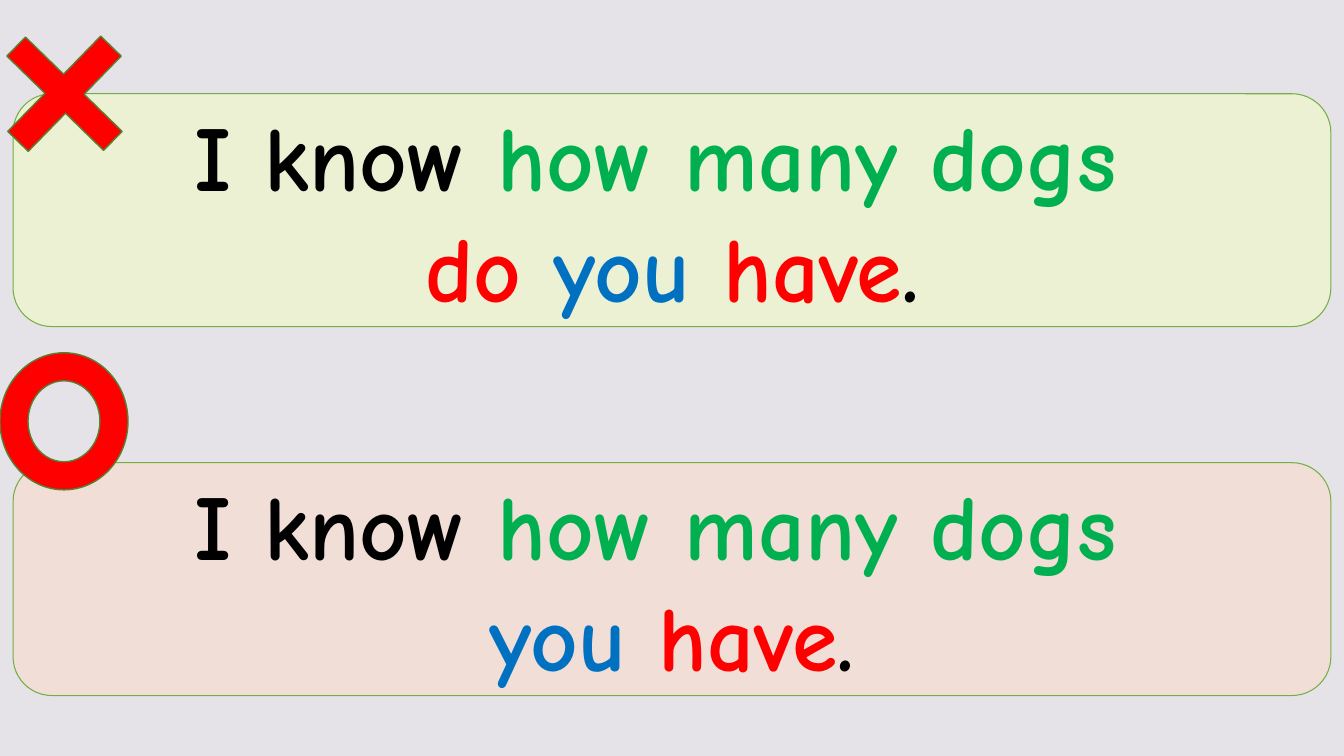
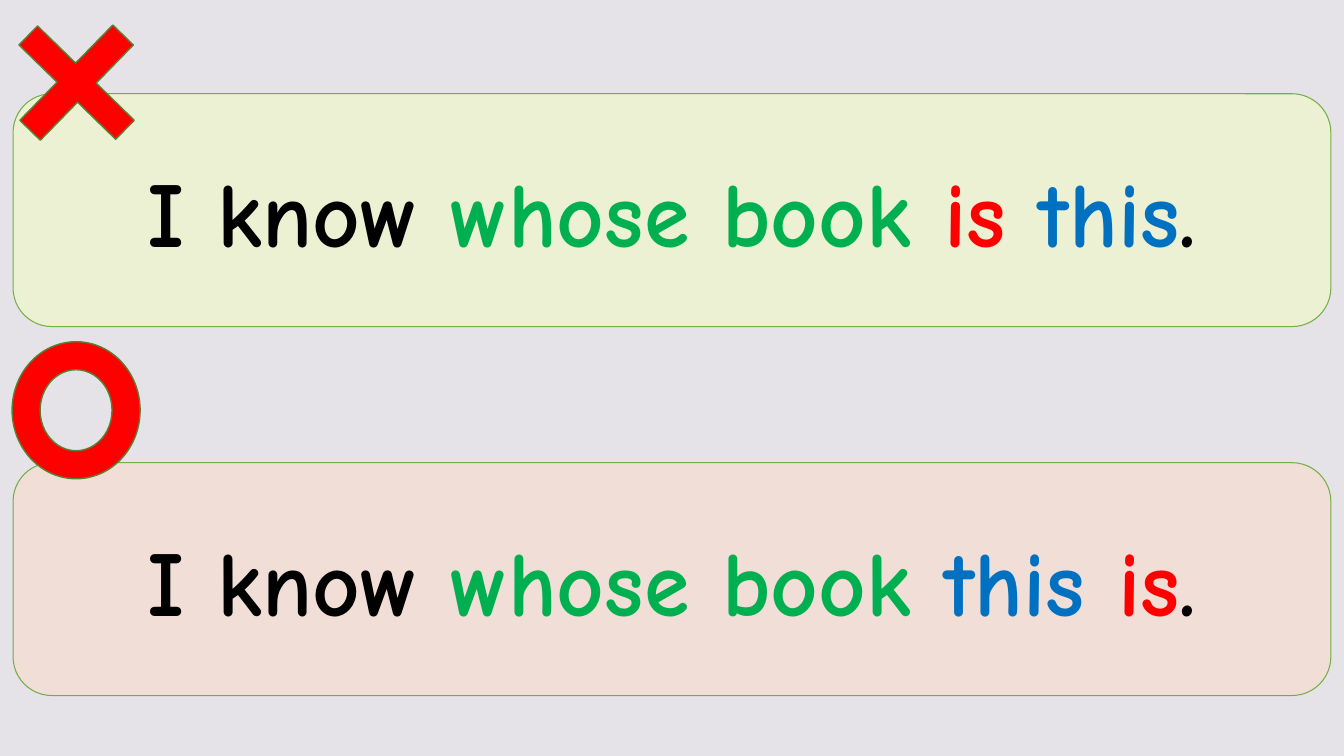
import pptx
import pptx.util
import pptx.dml.color
import pptx.enum.shapes
import pptx.enum.text

RGBColor = pptx.dml.color.RGBColor
Shape = pptx.enum.shapes.MSO_SHAPE

EMU_PER_PX = 9144

LAVENDER = RGBColor(0xE5, 0xE2, 0xE8)
PALE_GREEN = RGBColor(0xED, 0xF1, 0xD4)
PALE_PINK = RGBColor(0xF1, 0xDE, 0xD6)
PANEL_EDGE = RGBColor(0x74, 0xAF, 0x45)
MARK_EDGE = RGBColor(0x56, 0x81, 0x33)
BLACK = RGBColor(0x00, 0x00, 0x00)
GREEN = RGBColor(0x00, 0xB0, 0x50)
RED = RGBColor(0xFF, 0x00, 0x00)
BLUE = RGBColor(0x00, 0x70, 0xC0)


def px(length):
    return pptx.util.Emu(length * EMU_PER_PX)


class Deck:
    font_name = "Comic Neue"
    font_size = 66

    def __init__(self):
        self.presentation = pptx.Presentation()
        self.presentation.slide_width = px(1333)
        self.presentation.slide_height = px(750)
        self.slide = None

    def add_slide(self):
        layout = self.presentation.slide_layouts[6]
        self.slide = self.presentation.slides.add_slide(layout)
        background = self.slide.background.fill
        background.solid()
        background.fore_color.rgb = LAVENDER

    def add_shape(self, kind, box, fill, edge, edge_width):
        shape = self.slide.shapes.add_shape(kind, *map(px, box))
        shape.shadow.inherit = False
        shape.fill.solid()
        shape.fill.fore_color.rgb = fill
        shape.line.color.rgb = edge
        shape.line.width = pptx.util.Pt(edge_width)
        return shape

    def add_sentence(self, top, fill, lines):
        panel = self.add_shape(Shape.FLOWCHART_ALTERNATE_PROCESS,
                               (13, top, 1307, 231), fill, PANEL_EDGE, 0.75)
        frame = panel.text_frame
        frame.word_wrap = True
        frame.vertical_anchor = pptx.enum.text.MSO_ANCHOR.MIDDLE
        for index, line in enumerate(lines):
            paragraph = frame.add_paragraph() if index else frame.paragraphs[0]
            paragraph.alignment = pptx.enum.text.PP_ALIGN.CENTER
            for text, color in line:
                self.add_run(paragraph, text, color)

    def add_run(self, paragraph, text, color):
        run = paragraph.add_run()
        run.text = text
        run.font.name = self.font_name
        run.font.size = pptx.util.Pt(self.font_size)
        run.font.bold = True
        run.font.color.rgb = color

    def add_mark(self, kind, box, adjustment, rotation=0):
        mark = self.add_shape(kind, box, RED, MARK_EDGE, 1)
        mark.adjustments[0] = adjustment
        mark.rotation = rotation

    def add_cross(self, left, top):
        self.add_mark(Shape.CROSS, (left, top, 134, 132), 0.4, 44.3)

    def add_circle(self, left, top):
        self.add_mark(Shape.DONUT, (left, top, 127, 136), 0.219)

    def add_comparison(self, wrong, right, shift_x=0, shift_y=0):
        self.add_slide()
        self.add_sentence(93, PALE_GREEN, wrong)
        self.add_cross(shift_x - 3, shift_y + 27)
        self.add_sentence(459, PALE_PINK, right)
        self.add_circle(shift_x, shift_y + 350)


def main():
    deck = Deck()
    opening = ("I know ", BLACK)
    period = (".", BLACK)

    dogs = [opening, ("how many dogs ", GREEN)]
    you_have = [("you ", BLUE), ("have", RED), period]
    deck.add_comparison([dogs, [("do ", RED)] + you_have], [dogs, you_have])

    book = [opening, ("whose book ", GREEN)]
    deck.add_comparison(
        [book + [("is ", RED), ("this", BLUE), period]],
        [book + [("this ", BLUE), ("is", RED), period]],
        shift_x=12, shift_y=-11)

    deck.presentation.save("out.pptx")


if __name__ == "__main__":
    main()
